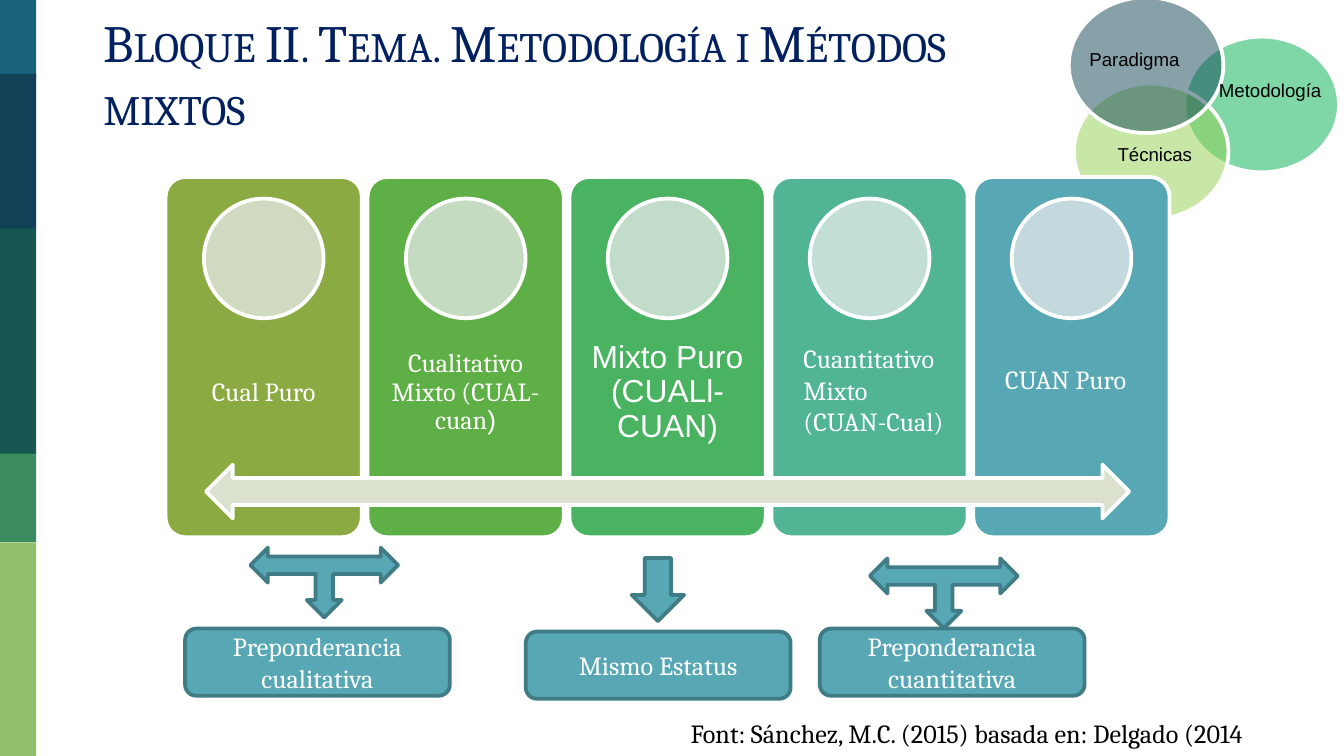
import pptx
import pptx.dml.color
import pptx.enum.shapes
import pptx.enum.text
import pptx.oxml.ns
import pptx.util
from lxml import etree

PX = 2286
SHAPE = pptx.enum.shapes.MSO_SHAPE
ALIGN = pptx.enum.text.PP_ALIGN
ANCHOR = pptx.enum.text.MSO_ANCHOR
FIT = pptx.enum.text.MSO_AUTO_SIZE
WHITE, BLACK, NAVY, TEAL, DARK_TEAL = "FFFFFF", "000000", "002060", "57A7B5", "407C86"

BANDS = [(0, 232, "18637B"), (220, 464, "124057"), (680, 672, "165751"),
         (1350, 264, "3B8D61"), (1614, 636, "94BF6E")]
CIRCLES = [(3525, 109, "00B050"), (3196, 249, "92D050"), (3181, -8, "114454")]
CIRCLE_LABELS = [("Paradigma", 3203, 124, 420, ALIGN.LEFT),
                 ("Metodología", 3576, 216, 408, ALIGN.CENTER),
                 ("Técnicas", 3287, 406, 336, ALIGN.LEFT)]
CARDS = [("8BAB42", "D0DAC0"), ("5EAF46", "C5DBC1"), ("4AB362", "C2DCCA"),
         ("50B495", "C3DDD7"), (TEAL, "C4D9DE")]
CARD_LEFT, CARD_STEP, CARD_WIDTH = 493, 601, 584
CARD_LABELS = [([("Cual Puro", "Cambria")], 14, 44),
               ([("Cualitativo Mixto (CUAL-cuan", "Cambria"), (")", "Arial")], 14, 44),
               ([("Mixto Puro (CUALl-CUAN)", "Arial")], 17, 52)]
ARROWS = [(SHAPE.LEFT_RIGHT_UP_ARROW, (2589, 1662, 440, 208), 180),
          (SHAPE.LEFT_RIGHT_UP_ARROW, (745, 1630, 440, 208), 180),
          (SHAPE.DOWN_ARROW, (1880, 1661, 156, 188), 0)]
OUTCOMES = [("Preponderancia cualitativa", 551, 1871),
            ("Preponderancia cuantitativa", 2440, 1871),
            ("Mismo Estatus", 1565, 1880)]


def color(hex_value):
    """Turn a hex string into a colour."""
    return pptx.dml.color.RGBColor.from_string(hex_value)


def emu(pixels):
    """Turn whole pixels into EMU."""
    return pptx.util.Emu(pixels * PX)


def apply_format(target, values):
    """Set every attribute named in a dict of format values."""
    for name, value in values.items():
        setattr(target, name, value)


def add_figure(slide, kind, box, fill, line=None, alpha=None, rotation=0, corner=None):
    """Draw a filled preset shape."""
    figure = slide.shapes.add_shape(kind, *map(emu, box))
    figure.shadow.inherit = False
    figure.rotation = rotation
    figure.fill.solid()
    figure.fill.fore_color.rgb = color(fill)
    if alpha is not None:
        tint = figure.fill._xPr.find(".//" + pptx.oxml.ns.qn("a:srgbClr"))
        etree.SubElement(tint, pptx.oxml.ns.qn("a:alpha"), val=str(alpha * 1000))
    if line:
        figure.line.color.rgb = color(line)
        figure.line.width = pptx.util.Pt(2)
    else:
        figure.line.fill.background()
    if corner is not None:
        figure.adjustments[0] = corner
    return figure


def write(holder, runs, size, ink, frame=None, paragraph=None):
    """Write one paragraph of (text, font) runs into a shape."""
    apply_format(holder.text_frame, {"word_wrap": True, **(frame or {})})
    line = holder.text_frame.paragraphs[0]
    apply_format(line, paragraph or {})
    for words, font_name in runs:
        run = line.add_run()
        run.text = words
        apply_format(run.font, {"name": font_name, "size": pptx.util.Pt(size)})
        run.font.color.rgb = color(ink)
    return line


def add_label(slide, box, runs, size, ink, frame=None, paragraph=None):
    """Place a text box holding one paragraph."""
    holder = slide.shapes.add_textbox(*map(emu, box))
    return write(holder, runs, size, ink, frame, paragraph)


def margins(pixels):
    """Give equal insets on all four sides."""
    return {"margin_" + side: emu(pixels) for side in ("left", "top", "right", "bottom")}


def add_title(slide):
    """Write the heading in small capitals."""
    heading = add_label(slide, (268, -8, 2992, 228),
                        [("Bloque II. Tema. Metodología i Métodos mixtos", "Cambria")],
                        28, NAVY, margins(40), {"space_before": pptx.util.Pt(6)})
    heading.runs[0].font._element.set("cap", "small")


def add_venn(slide):
    """Draw the three overlapping circles with their names."""
    for left, top, fill in CIRCLES:
        add_figure(slide, SHAPE.OVAL, (left, top, 460, 404), fill, WHITE, alpha=50)
    for name, left, top, width, align in CIRCLE_LABELS:
        add_label(slide, (left, top, width, 108), [(name, "Arial")], 10, BLACK,
                  {"auto_size": FIT.SHAPE_TO_FIT_TEXT}, {"alignment": align})


def add_continuum(slide):
    """Draw the five method cards and the arrow across them."""
    for index, (fill, disc) in enumerate(CARDS):
        left = CARD_LEFT + index * CARD_STEP
        add_figure(slide, SHAPE.ROUNDED_RECTANGLE, (left, 527, CARD_WIDTH, 1072),
                   fill, WHITE, corner=0.1)
        add_figure(slide, SHAPE.OVAL, (left + 114, 591, 356, 356), disc, WHITE)
    for index, (runs, size, inset) in enumerate(CARD_LABELS):
        add_label(slide, (CARD_LEFT + index * CARD_STEP, 955, CARD_WIDTH, 428),
                  runs, size, WHITE,
                  {"vertical_anchor": ANCHOR.MIDDLE, **margins(inset)},
                  {"alignment": ALIGN.CENTER, "line_spacing": 0.9})
    add_figure(slide, SHAPE.LEFT_RIGHT_ARROW, (613, 1383, 2748, 160), "DAE2CF", WHITE)
    grow = {"auto_size": FIT.SHAPE_TO_FIT_TEXT}
    add_label(slide, (2352, 1000, 504, 416),
              [("Cuantitativo Mixto (CUAN-Cual)", "Cambria")], 14, WHITE, grow)
    add_label(slide, (2920, 1062, 504, 136), [("CUAN Puro", "Cambria")], 14, WHITE,
              grow, {"alignment": ALIGN.CENTER})


def add_outcomes(slide):
    """Draw the arrows down to the three outcome boxes."""
    for kind, box, rotation in ARROWS:
        add_figure(slide, kind, box, TEAL, DARK_TEAL, rotation=rotation)
    for name, left, top in OUTCOMES:
        outcome = add_figure(slide, SHAPE.ROUNDED_RECTANGLE, (left, top, 788, 200),
                             TEAL, DARK_TEAL)
        write(outcome, [(name, "Cambria")], 14, WHITE,
              {"vertical_anchor": ANCHOR.MIDDLE}, {"alignment": ALIGN.CENTER})


def main():
    """Build the slide and save it."""
    deck = pptx.Presentation()
    apply_format(deck, {"slide_width": emu(4000), "slide_height": emu(2250)})
    slide = deck.slides.add_slide(deck.slide_layouts[6])
    for top, height, fill in BANDS:
        add_figure(slide, SHAPE.RECTANGLE, (0, top, 108, height), fill)
    add_title(slide)
    add_venn(slide)
    add_continuum(slide)
    add_outcomes(slide)
    add_label(slide, (2016, 2116, 1860, 136),
              [("Font: Sánchez, M.C. (2015) basada en: Delgado (2014", "Cambria")],
              14, BLACK, {"word_wrap": False, "auto_size": FIT.SHAPE_TO_FIT_TEXT})
    deck.save("out.pptx")


if __name__ == "__main__":
    main()
